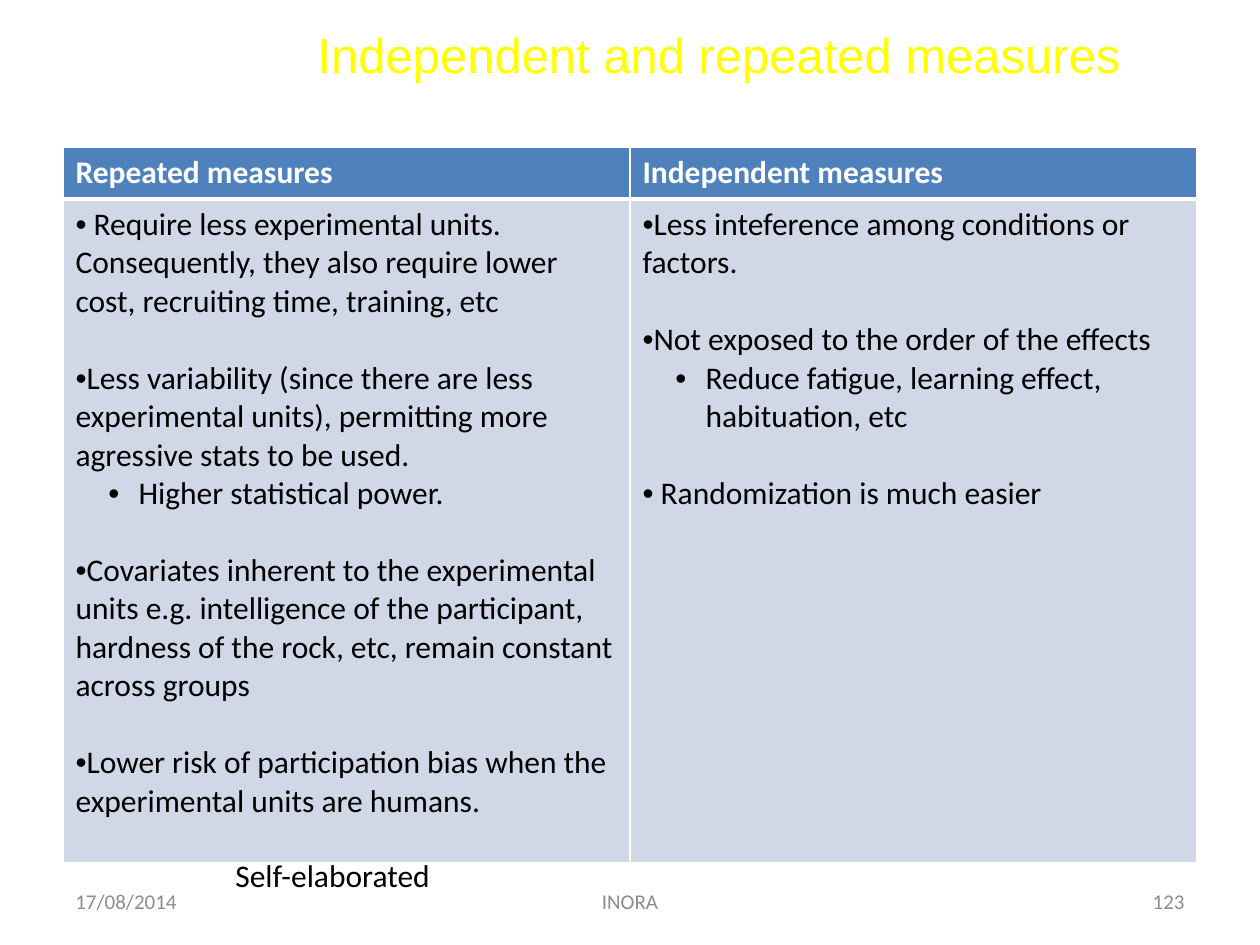
from dataclasses import dataclass

from lxml.etree import SubElement
from pptx import Presentation
from pptx.dml.color import RGBColor
from pptx.enum.text import MSO_ANCHOR, PP_ALIGN
from pptx.oxml.ns import qn
from pptx.util import Inches, Pt


@dataclass(frozen=True)
class Theme:
    title_color: str = "FFFF00"
    header_fill: str = "4F81BD"
    body_fill: str = "D0D8E8"
    light: str = "FFFFFF"
    dark: str = "000000"
    muted: str = "8C8C8C"
    title_font: str = "Arial"
    body_font: str = "Calibri"
    title_size: int = 28
    body_size: int = 18
    footer_size: int = 12
    point_gap: int = 22


@dataclass(frozen=True)
class Box:
    left: float
    top: float
    width: float
    height: float

    def emu(self):
        return [Inches(n) for n in (self.left, self.top, self.width, self.height)]


THEME = Theme()
WIDTH, HEIGHT = 10, 7.5
MARGIN = WIDTH / 20
CONTENT = WIDTH - 2 * MARGIN
HEADER_ROW = 0.41

# Each column: heading, then groups of a main point and its sub-points.
COLUMNS = [
    ("Repeated measures", [
        (" Require less experimental units. Consequently, they also require lower "
         "cost, recruiting time, training, etc", []),
        ("Less variability (since there are less experimental units), permitting more "
         "agressive stats to be used.", ["Higher statistical power."]),
        ("Covariates inherent to the experimental units e.g. intelligence of the "
         "participant, hardness of the rock, etc, remain constant across groups", []),
        ("Lower risk of participation bias when the experimental units are humans.", []),
    ]),
    ("Independent measures", [
        ("Less inteference among conditions or factors.", []),
        ("Not exposed to the order of the effects",
         ["Reduce fatigue, learning effect, habituation, etc"]),
        (" Randomization is much easier", []),
    ]),
]


def style(para, size, color, name=THEME.body_font, bold=False):
    para.font.size = Pt(size)
    para.font.name = name
    para.font.bold = bold
    para.font.color.rgb = RGBColor.from_string(color)


def add_bullet(para, left=0.0, hanging=0.0):
    props = para._p.get_or_add_pPr()
    props.set("marL", str(Inches(left)))
    props.set("indent", str(-Inches(hanging)))
    SubElement(props, qn("a:buFont"), typeface="Arial")
    SubElement(props, qn("a:buChar"), char="•")


def paint_cell(cell, fill, top, bottom):
    """Set white borders (widths in points), then the fill."""
    props = cell._tc.get_or_add_tcPr()
    for side, width in (("L", 1), ("R", 1), ("T", top), ("B", bottom)):
        line = SubElement(props, qn(f"a:ln{side}"), w=str(Pt(width)))
        solid = SubElement(line, qn("a:solidFill"))
        SubElement(solid, qn("a:srgbClr"), val=THEME.light)
    cell.fill.solid()
    cell.fill.fore_color.rgb = RGBColor.from_string(fill)


def place_title(page, box, text):
    title = page.shapes.title
    title.left, title.top, title.width, title.height = box.emu()
    title.text_frame.vertical_anchor = MSO_ANCHOR.MIDDLE
    para = title.text_frame.paragraphs[0]
    para.text = text
    para.alignment = PP_ALIGN.CENTER
    style(para, THEME.title_size, THEME.title_color, THEME.title_font)


def fill_points(frame, groups):
    first = True
    for point, details in groups:
        for level, text in enumerate([point, *details]):
            para = frame.paragraphs[0] if first else frame.add_paragraph()
            para.text = text
            if level:
                para.level = 1
                add_bullet(para, left=0.5, hanging=0.24)
            else:
                para.space_before = Pt(0 if first else THEME.point_gap)
                add_bullet(para)
            style(para, THEME.body_size, THEME.dark)
            first = False


def place_comparison(page, box, columns):
    table = page.shapes.add_table(2, len(columns), *box.emu()).table
    table.horz_banding = False
    table.rows[0].height = Inches(HEADER_ROW)
    table.rows[1].height = Inches(box.height - HEADER_ROW)
    for index, (heading, groups) in enumerate(columns):
        table.columns[index].width = Inches(box.width / len(columns))
        header, body = table.cell(0, index), table.cell(1, index)
        paint_cell(header, THEME.header_fill, top=1, bottom=3)
        paint_cell(body, THEME.body_fill, top=3, bottom=1)
        header.text = heading
        style(header.text_frame.paragraphs[0], THEME.body_size, THEME.light, bold=True)
        fill_points(body.text_frame, groups)


def place_label(page, box, text, size, color, align=PP_ALIGN.LEFT, wrap=True):
    frame = page.shapes.add_textbox(*box.emu()).text_frame
    frame.word_wrap = wrap
    frame.vertical_anchor = MSO_ANCHOR.MIDDLE
    para = frame.paragraphs[0]
    para.text = text
    para.alignment = align
    style(para, size, color)


def place_footer(page, box, date, owner, number):
    side, middle = 2.33, 3.17
    right = box.left + box.width
    parts = [
        (date, box.left, side, PP_ALIGN.LEFT),
        (owner, box.left + (box.width - middle) / 2, middle, PP_ALIGN.CENTER),
        (number, right - side, side, PP_ALIGN.RIGHT),
    ]
    for text, left, width, align in parts:
        place_label(page, Box(left, box.top, width, box.height), text,
                    THEME.footer_size, THEME.muted, align)


def main():
    deck = Presentation()
    deck.slide_width, deck.slide_height = Inches(WIDTH), Inches(HEIGHT)
    page = deck.slides.add_slide(deck.slide_layouts[5])
    place_title(page, Box(2.19, 0, 7.03, 0.86), "Independent and repeated measures")
    place_comparison(page, Box(MARGIN, 1.17, CONTENT, 5.68), COLUMNS)
    place_footer(page, Box(MARGIN, 6.95, CONTENT, 0.4), "17/08/2014", "INORA", "123")
    place_label(page, Box(1.77, 6.74, 1.77, 0.4), "Self-elaborated",
                THEME.body_size, THEME.dark, wrap=False)
    deck.save("out.pptx")


if __name__ == "__main__":
    main()
